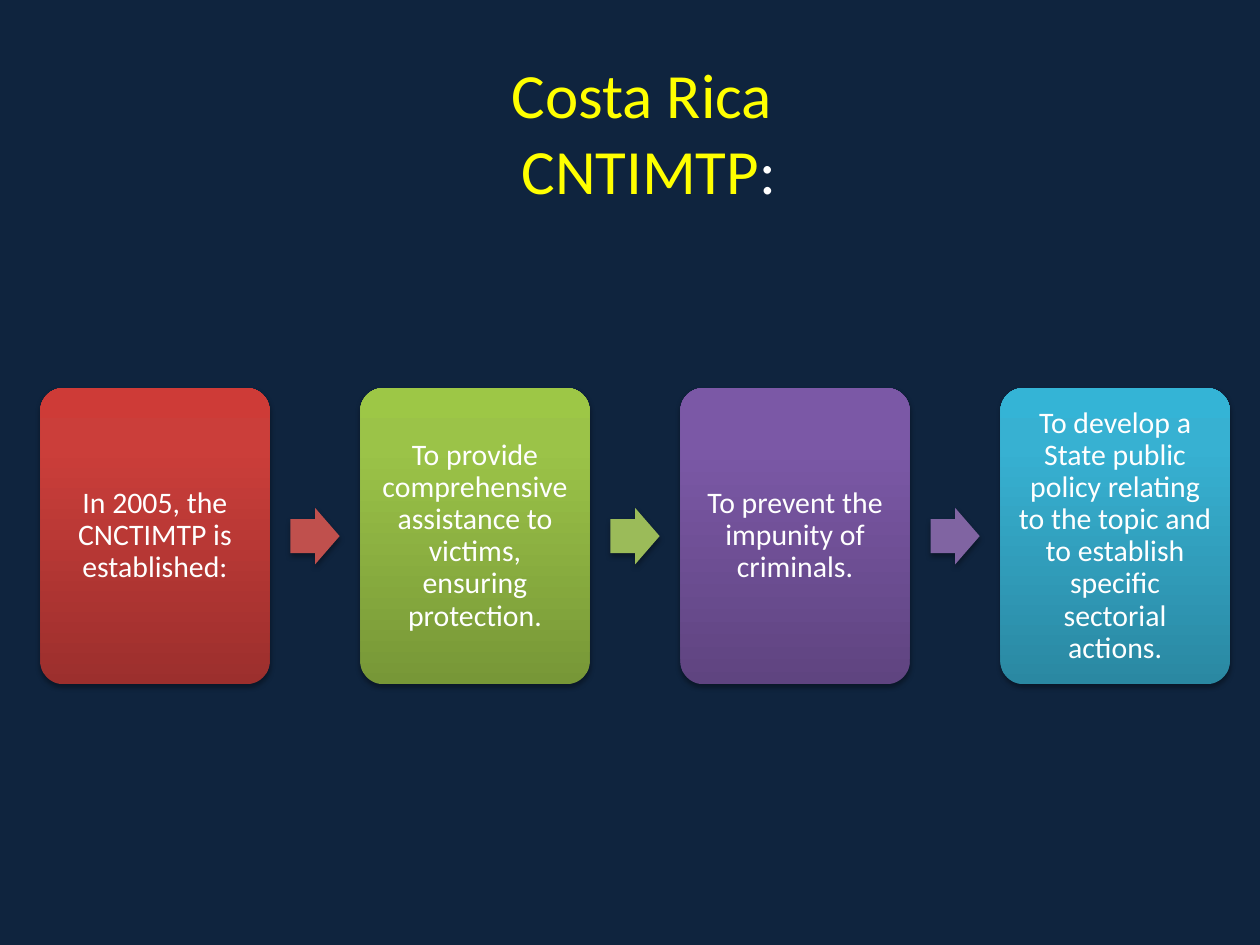
from lxml import etree
from pptx import Presentation
from pptx import util as u
from pptx.dml.color import RGBColor
from pptx.enum import shapes, text
from pptx.oxml import parse_xml
from pptx.oxml.ns import nsdecls, qn

BACKGROUND, YELLOW, WHITE = "0F243E", "FFFF00", "FFFFFF"
TITLE = [("Costa Rica \vCNTIMTP", YELLOW), (":", WHITE)]
STEPS = [
    ("In 2005, the CNCTIMTP is established:", ("9C2F2D", "CB3E3A", "CE3B37"), "C0504D"),
    ("To provide comprehensive assistance to victims, ensuring protection.",
     ("779737", "9BC348", "9DC746"), "9BBB59"),
    ("To prevent the impunity of criminals.", ("5F4480", "7B58A6", "7C57A8"), "8064A2"),
    ("To develop a State public policy relating to the topic and to establish "
     "specific sectorial actions.", ("2A88A2", "37B1D2", "34B4D6"), None),
]
STOPS = (0, 80, 100)
LEFT, TOP, PITCH = 0.32, 3.08, 2.54
CARD_WIDTH, CARD_HEIGHT = 1.82, 2.35
ARROW_WIDTH, ARROW_HEIGHT = 0.39, 0.45


def color(value):
    """Turn a hex string into a colour."""
    return RGBColor.from_string(value)


def apply(target, values):
    """Set attributes of an object from a dict."""
    for name, value in values.items():
        setattr(target, name, value)


def write(shape, pieces, size, margins, spacing):
    """Fill a shape with one centred paragraph of coloured spans."""
    frame = shape.text_frame
    apply(frame, {"word_wrap": True, "vertical_anchor": text.MSO_ANCHOR.MIDDLE})
    apply(frame, {f"margin_{side}": u.Inches(inset) for side, inset in margins.items()})
    para = frame.paragraphs[0]
    apply(para, {"alignment": text.PP_ALIGN.CENTER, "line_spacing": spacing})
    for index, (words, tint) in enumerate(pieces):
        for number, line in enumerate(words.split("\v")):
            if number:
                para.add_line_break()
            span = para.add_run()
            span.text = line
            apply(span.font, {"size": u.Pt(size), "name": "Calibri"})
            span.font.color.rgb = color(tint)


def add_block(page, kind, place, adjustments):
    """Add a borderless preset shape with a soft shadow below it."""
    block = page.shapes.add_shape(kind, *map(u.Inches, place))
    for index, value in enumerate(adjustments):
        block.adjustments[index] = value
    block.line.fill.background()
    block.shadow.inherit = False
    effects = block._element.spPr.find(qn("a:effectLst"))
    effects.append(parse_xml(
        f'<a:outerShdw {nsdecls("a")} blurRad="{u.Pt(3.1)}" dist="{u.Pt(1.8)}" '
        'dir="5400000" rotWithShape="0"><a:srgbClr val="000000">'
        '<a:alpha val="35000"/></a:srgbClr></a:outerShdw>'))
    return block


def shade(block, tints):
    """Give a shape a three-stop gradient rising from its bottom edge."""
    block.fill.gradient()
    gradient = block._element.spPr.find(qn("a:gradFill"))
    stops = gradient.find(qn("a:gsLst"))
    for stop in list(stops):
        stops.remove(stop)
    for share, tint in zip(STOPS, tints):
        stop = etree.SubElement(stops, qn("a:gs"), pos=str(share * 1000))
        etree.SubElement(stop, qn("a:srgbClr"), val=tint)
    gradient.find(qn("a:lin")).set("ang", str(270 * 60000))


def main():
    """Build the slide and save it."""
    deck = Presentation()
    apply(deck, {"slide_width": u.Inches(10), "slide_height": u.Inches(7.5)})
    page = deck.slides.add_slide(deck.slide_layouts[6])
    page.background.fill.solid()
    page.background.fill.fore_color.rgb = color(BACKGROUND)

    title = page.shapes.add_textbox(*map(u.Inches, (0.9, 0.52, 8.5, 1.04)))
    write(title, TITLE, 36, {}, 1.0)

    insets = dict.fromkeys(("left", "top", "right", "bottom"), 0.07)
    gap = (PITCH - CARD_WIDTH - ARROW_WIDTH) / 2
    arrow_top = TOP + (CARD_HEIGHT - ARROW_HEIGHT) / 2
    for column, (words, tints, arrow_tint) in enumerate(STEPS):
        left = LEFT + column * PITCH
        card = add_block(page, shapes.MSO_SHAPE.ROUNDED_RECTANGLE,
                         (left, TOP, CARD_WIDTH, CARD_HEIGHT), [0.1])
        shade(card, tints)
        write(card, [(words, WHITE)], 17, insets, 0.9)
        if arrow_tint:
            arrow = add_block(page, shapes.MSO_SHAPE.RIGHT_ARROW,
                              (left + CARD_WIDTH + gap, arrow_top, ARROW_WIDTH, ARROW_HEIGHT),
                              [0.6, 0.5])
            arrow.fill.solid()
            arrow.fill.fore_color.rgb = color(arrow_tint)
    deck.save("out.pptx")


if __name__ == "__main__":
    main()
